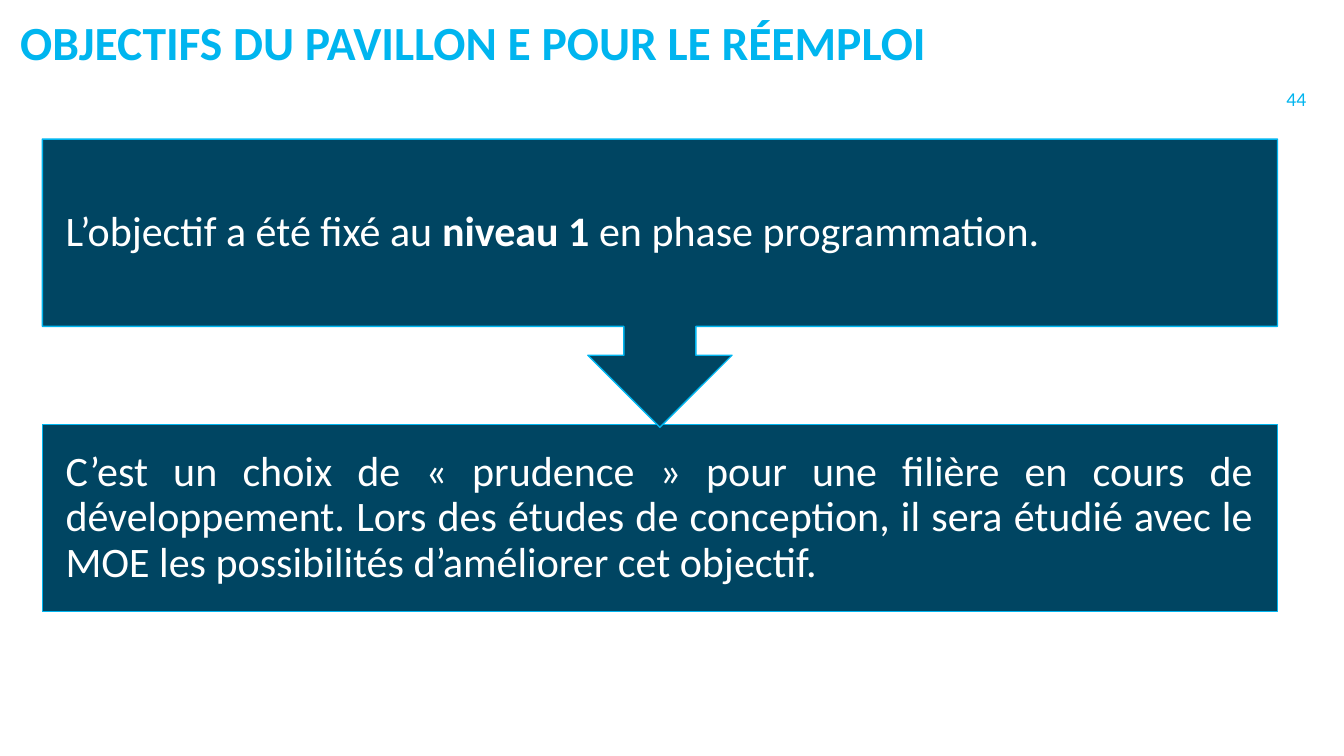
from pptx import Presentation
from pptx import util as u
from pptx.dml.color import RGBColor
from pptx.enum import shapes, text

NAVY, CYAN, WHITE = "004562", "00B5EF", "FFFFFF"


def color(hex_value):
    return RGBColor.from_string(hex_value)


def write(frame, *runs, size=30, fill=WHITE, bold=False, align=text.PP_ALIGN.LEFT,
          anchor=text.MSO_ANCHOR.MIDDLE, inset=None, spacing=None):
    """Fill a text frame; a run is a string or a (string, bold) pair."""
    frame.word_wrap = True
    frame.auto_size = text.MSO_AUTO_SIZE.NONE
    frame.vertical_anchor = anchor
    if inset is not None:
        frame.margin_left = frame.margin_right = u.Inches(inset)
        frame.margin_top = frame.margin_bottom = u.Inches(inset)
    paragraph = frame.paragraphs[0]
    paragraph.alignment = align
    paragraph.line_spacing = spacing
    for item in runs:
        words, strong = (item, bold) if isinstance(item, str) else item
        run = paragraph.add_run()
        run.text = words
        run.font.name = "Calibri"
        run.font.size = u.Pt(size)
        run.font.bold = strong
        run.font.color.rgb = color(fill)


class ObjectivesSlide:
    """Holds the style and the current slide."""

    def __init__(self, deck):
        self.slide = deck.slides.add_slide(deck.slide_layouts[5])

    def title(self, words, left, top, width, height):
        heading = self.slide.shapes.title
        heading.left, heading.top = u.Inches(left), u.Inches(top)
        heading.width, heading.height = u.Inches(width), u.Inches(height)
        heading.fill.solid()
        heading.fill.fore_color.rgb = color(WHITE)
        write(heading.text_frame, words, size=34, fill=CYAN, bold=True,
              anchor=text.MSO_ANCHOR.BOTTOM)

    def page_number(self, number, left, top, side):
        box = self.slide.shapes.add_textbox(
            u.Inches(left), u.Inches(top), u.Inches(side), u.Inches(side))
        write(box.text_frame, number, size=14, fill=CYAN)

    def step(self, kind, top, height, *runs):
        block = self.slide.shapes.add_shape(
            kind, u.Inches(0.42), u.Inches(top), u.Inches(12.25), u.Inches(height))
        block.shadow.inherit = False
        block.fill.solid()
        block.fill.fore_color.rgb = color(NAVY)
        block.line.color.rgb = color(CYAN)
        block.line.width = u.Pt(1)
        write(block.text_frame, *runs, align=text.PP_ALIGN.JUSTIFY,
              inset=0.23, spacing=0.9)


def main():
    deck = Presentation()
    deck.slide_width, deck.slide_height = u.Inches(13.33), u.Inches(7.5)
    page = ObjectivesSlide(deck)

    # Conclusion first, so that the arrow tip lies over it
    page.step(shapes.MSO_SHAPE.RECTANGLE, 4.21, 1.86,
              "C’est un choix de « prudence » pour une filière en cours de "
              "développement. Lors des études de conception, il sera étudié avec "
              "le MOE les possibilités d’améliorer cet objectif.")

    # Objective, pointing down to the conclusion
    page.step(shapes.MSO_SHAPE.DOWN_ARROW_CALLOUT, 1.38, 2.86,
              "L’objectif a été fixé au ", ("niveau 1", True),
              " en phase programmation.")

    # Heading and page number
    page.page_number("44", 12.66, 0.64, 0.67)
    page.title("OBJECTIFS DU PAVILLON E POUR LE RÉEMPLOI", 0.1, 0.16, 11.08, 0.59)

    deck.save("out.pptx")


if __name__ == "__main__":
    main()
